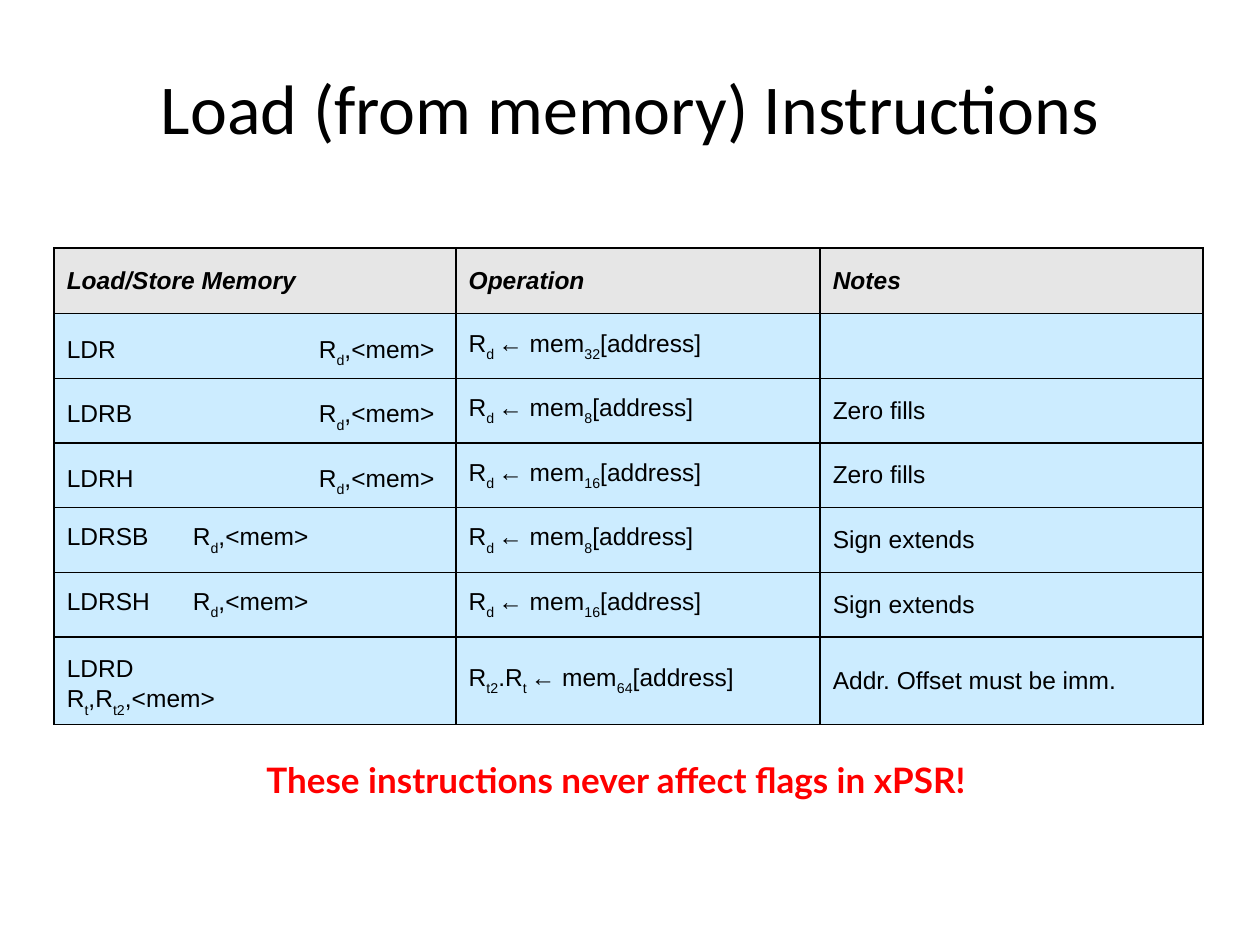
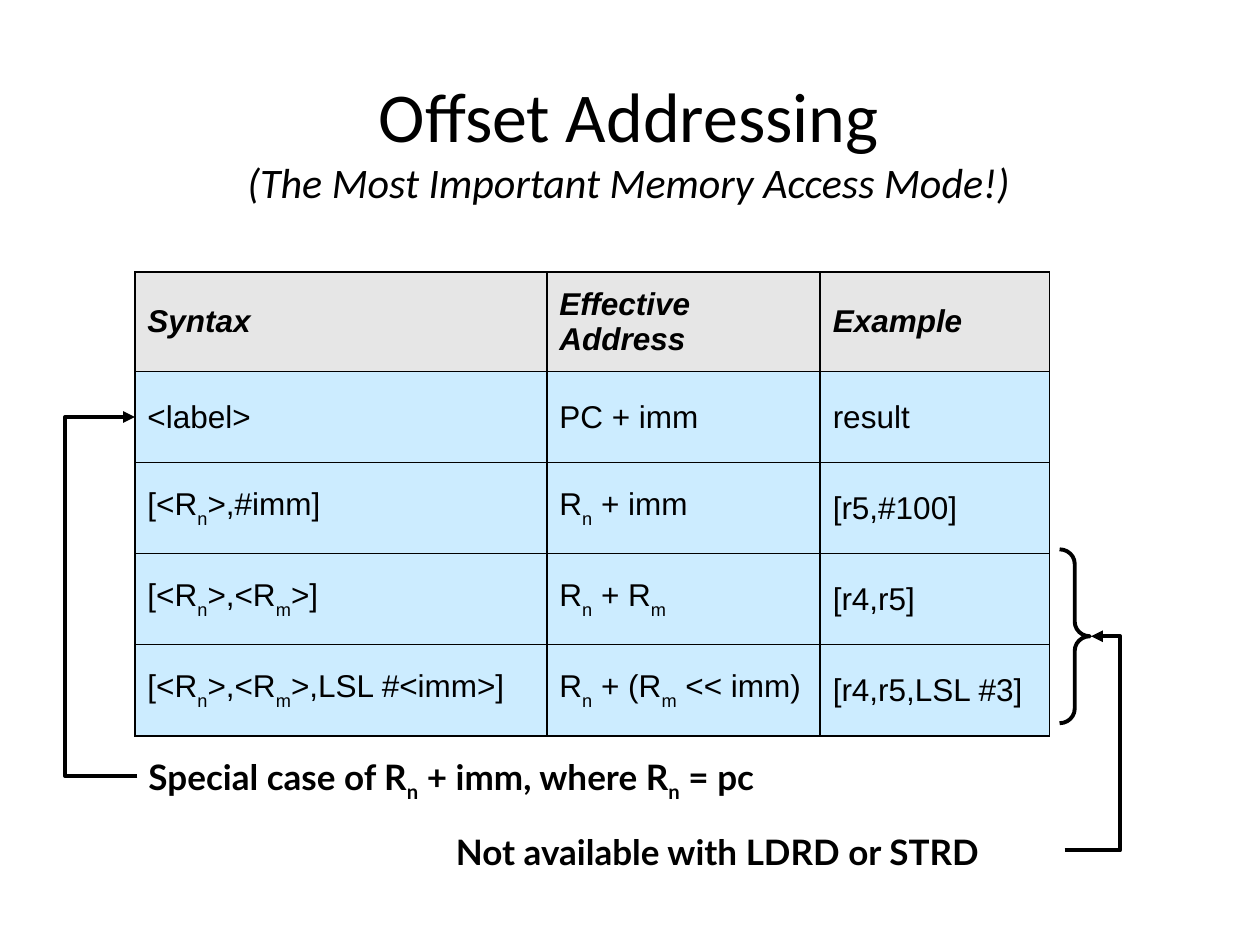
from lxml import etree
from pptx import Presentation
from pptx.dml.color import RGBColor
from pptx.enum import shapes, text
from pptx.oxml.ns import qn
from pptx.util import Inches, Pt

BLACK = RGBColor(0x00, 0x00, 0x00)
RED = RGBColor(0xFF, 0x00, 0x00)
HEADER_GREY = RGBColor(0xE6, 0xE6, 0xE6)
CELL_BLUE = RGBColor(0xCC, 0xEC, 0xFF)
TITLE_FONT, TABLE_FONT, CAPTION_FONT = "Calibri", "Arial", "Lato"
LEFT, CENTER = text.PP_ALIGN.LEFT, text.PP_ALIGN.CENTER


class Deck:
    """Holds the shared style and the current slide."""

    def __init__(self):
        self.prs = Presentation()
        self.prs.slide_width, self.prs.slide_height = Inches(10), Inches(7.5)
        self.s = None

    def slide(self):
        self.s = self.prs.slides.add_slide(self.prs.slide_layouts[6])

    def style(self, r, font, size, color=BLACK, bold=False, italic=False):
        r.font.name, r.font.size = font, Pt(size)
        r.font.bold, r.font.italic = bold, italic
        r.font.color.rgb = color

    def add_runs(self, p, markup, font, size, drop=-30, **look):
        """Text between bars is subscript; a second tab is set in caption type."""
        pieces = markup.replace("\t\t", "\t||\t||").split("|")
        for i, piece in enumerate(pieces):
            if not piece:
                continue
            r = p.add_run()
            r.text = piece
            if piece == "\t":
                self.style(r, CAPTION_FONT, 20)
                continue
            self.style(r, font, size, **look)
            if i % 2:
                r._r.get_or_add_rPr().set("baseline", str(drop * 1000))

    def box(self, x, y, w, h, anchor):
        sp = self.s.shapes.add_textbox(Inches(x), Inches(y), Inches(w), Inches(h))
        tf = sp.text_frame
        tf.word_wrap = True
        tf.vertical_anchor = anchor
        return tf.paragraphs[0]

    def title(self, x, y, heading, subtitle=""):
        p = self.box(x, y, 8.5, 1.25, text.MSO_ANCHOR.MIDDLE)
        p.text = f"{heading}\n{subtitle}" if subtitle else heading
        p.alignment = CENTER
        self.style(p.runs[0], TITLE_FONT, 40)
        for r in p.runs[1:]:
            self.style(r, TITLE_FONT, 24, italic=True)

    def caption(self, x, y, w, markup, color=BLACK, align=LEFT):
        p = self.box(x, y, w, 0.43, text.MSO_ANCHOR.TOP)
        p.alignment = align
        self.add_runs(p, markup, CAPTION_FONT, 20, drop=-25, color=color, bold=True)

    def borders(self, cell):
        tcPr = cell._tc.get_or_add_tcPr()
        for side in ("lnL", "lnR", "lnT", "lnB"):
            ln = etree.SubElement(tcPr, qn(f"a:{side}"), w=str(Pt(1)))
            fill = etree.SubElement(ln, qn("a:solidFill"))
            etree.SubElement(fill, qn("a:srgbClr"), val=str(BLACK))

    def tab_stops(self, p, stops):
        tabs = etree.SubElement(p._p.get_or_add_pPr(), qn("a:tabLst"))
        for stop in stops:
            etree.SubElement(tabs, qn("a:tab"), pos=str(Inches(stop)), algn="l")

    def table(self, x, y, widths, header_height, height, rows, size):
        table = self.s.shapes.add_table(
            len(rows), len(widths), Inches(x), Inches(y),
            Inches(sum(widths)), Inches(height)).table
        table.first_row = table.horz_banding = False
        for column, width in zip(table.columns, widths):
            column.width = Inches(width)
        body_height = (height - header_height) / (len(rows) - 1)
        for i, row in enumerate(rows):
            head = i == 0
            table.rows[i].height = Inches(header_height if head else body_height)
            for j, markup in enumerate(row):
                cell = table.cell(i, j)
                self.borders(cell)
                cell.fill.solid()
                cell.fill.fore_color.rgb = HEADER_GREY if head else CELL_BLUE
                cell.vertical_anchor = text.MSO_ANCHOR.MIDDLE
                p = cell.text_frame.paragraphs[0]
                if "\t" in markup:
                    self.tab_stops(p, (1, 2))
                self.add_runs(p, markup, TABLE_FONT, size, bold=head, italic=head)

    def outline(self, sp):
        sp.line.color.rgb, sp.line.width = BLACK, Pt(2.25)

    def brace(self, x, y, w, h):
        sp = self.s.shapes.add_shape(
            shapes.MSO_SHAPE.RIGHT_BRACE, Inches(x), Inches(y), Inches(w), Inches(h))
        sp.shadow.inherit = False
        sp.fill.background()
        sp.adjustments[0] = 0.48
        self.outline(sp)

    def elbow_arrow(self, start, end, bend_x):
        """Horizontal, vertical, horizontal arrow that turns at bend_x."""
        (x0, y0), (x1, y1) = start, end
        c = self.s.shapes.add_connector(
            shapes.MSO_CONNECTOR.ELBOW, Inches(x0), Inches(y0), Inches(x1), Inches(y1))
        self.outline(c)
        spPr = c._element.spPr
        bend = round((bend_x - x0) / (x1 - x0) * 100000)
        guides = spPr.find(qn("a:prstGeom")).find(qn("a:avLst"))
        etree.SubElement(guides, qn("a:gd"), name="adj1", fmla=f"val {bend}")
        etree.SubElement(spPr.find(qn("a:ln")), qn("a:tailEnd"), type="triangle")
        etree.SubElement(spPr, qn("a:effectLst"))


def load_instructions(deck):
    deck.slide()

    # Instruction table
    def load(bits):
        return f"R|d |← mem|{bits}|[address]"

    rows = [
        ("Load/Store Memory", "Operation", "Notes"),
        ("LDR \t\tR|d|,<mem>", load(32), ""),
        ("LDRB\t\tR|d|,<mem>", load(8), "Zero fills"),
        ("LDRH\t\tR|d|,<mem>", load(16), "Zero fills"),
        ("LDRSB\tR|d|,<mem>", load(8), "Sign extends"),
        ("LDRSH\tR|d|,<mem>", load(16), "Sign extends"),
        ("LDRD \t\tR|t|,R|t2|,<mem>", "R|t2|.R|t |← mem|64|[address]",
         "Addr. Offset must be imm."),
    ]
    deck.table(0.43, 1.97, (3.19, 2.89, 3.04), 0.52, 3.6, rows, 14)

    # Title and warning
    deck.title(0.75, 0.22, "Load (from memory) Instructions")
    deck.caption(0.83, 5.97, 8.12, "These instructions never affect flags in xPSR!",
                 RED, CENTER)


def offset_addressing(deck):
    deck.slide()

    # Addressing table
    rows = [
        ("Syntax", "Effective Address", "Example"),
        ("<label>", "PC + imm", "result"),
        ("[<R|n|>,#imm]", "R|n| + imm", "[r5,#100]"),
        ("[<R|n|>,<R|m|>]", "R|n| + R|m|", "[r4,r5]"),
        ("[<R|n|>,<R|m|>,LSL #<imm>]", "R|n| + (R|m| << imm)", "[r4,r5,LSL #3]"),
    ]
    deck.table(1.07, 2.16, (3.27, 2.17, 1.82), 0.79, 3.68, rows, 18)
    deck.title(0.74, 0.48, "Offset Addressing",
               "(The Most Important Memory Access Mode!)")

    # Label row explained
    deck.caption(1.08, 5.95, 6.59, "Special case of R|n| + imm, where R|n| = pc")
    deck.elbow_arrow((1.09, 6.16), (1.07, 3.31), 0.52)

    # Register offset rows explained
    deck.caption(3.52, 6.54, 4.93, "Not available with LDRD or STRD")
    deck.brace(8.41, 4.36, 0.24, 1.38)
    deck.elbow_arrow((8.45, 6.75), (8.66, 5.05), 8.89)


def main():
    deck = Deck()
    load_instructions(deck)
    offset_addressing(deck)
    deck.prs.save("out.pptx")


if __name__ == "__main__":
    main()
